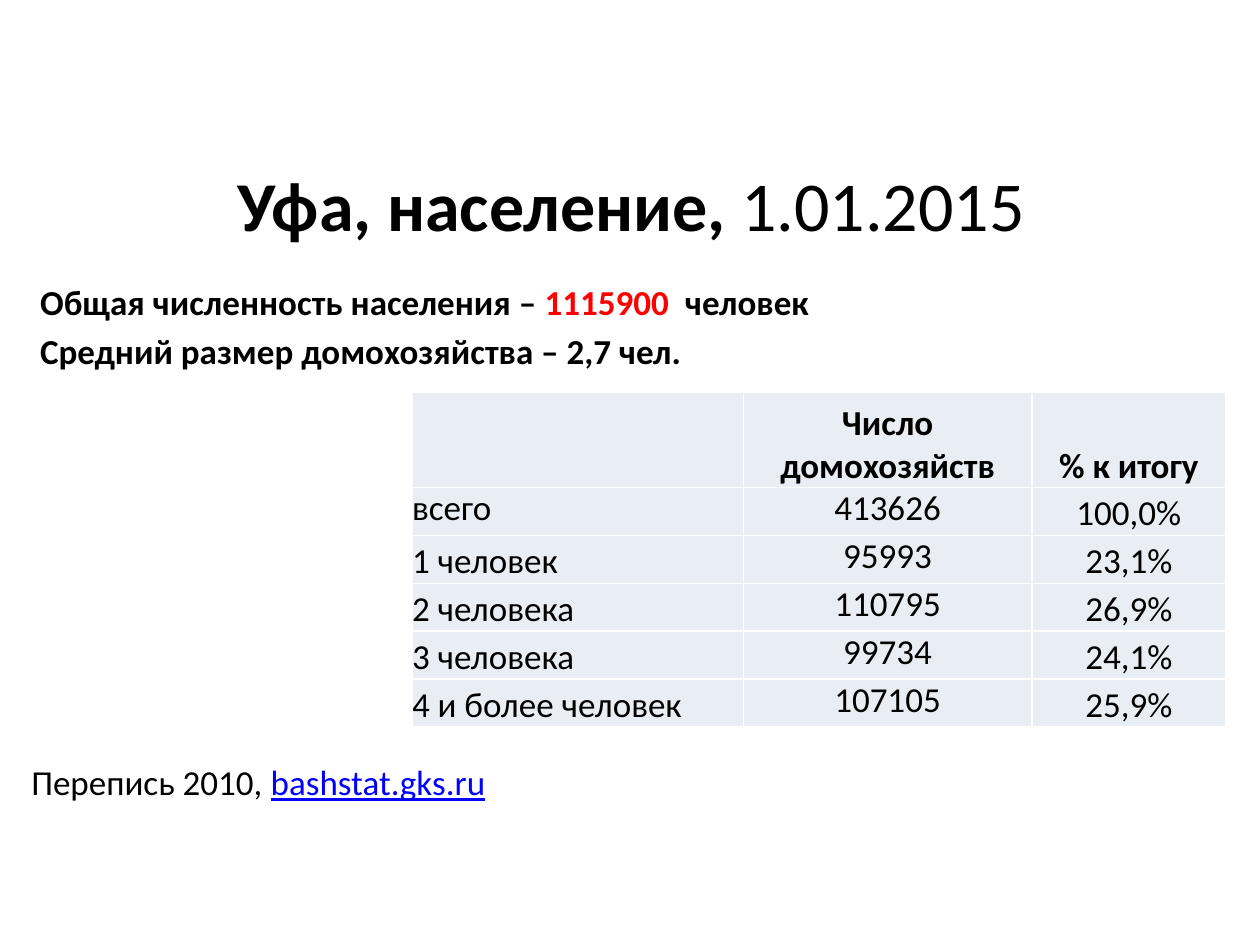
from pptx import Presentation
from pptx.dml.color import RGBColor
from pptx.enum.text import MSO_ANCHOR, PP_ALIGN
from pptx.oxml.ns import qn
from pptx.util import Inches, Pt
from lxml import etree

BLACK = RGBColor(0x00, 0x00, 0x00)
RED = RGBColor(0xFF, 0x00, 0x00)
BLUE = RGBColor(0x00, 0x00, 0xFF)
CELL_FILL = RGBColor(0xE9, 0xED, 0xF4)
TOP, MIDDLE, BOTTOM = MSO_ANCHOR.TOP, MSO_ANCHOR.MIDDLE, MSO_ANCHOR.BOTTOM
LEFT, CENTER = PP_ALIGN.LEFT, PP_ALIGN.CENTER


def add_run(p, text, size=20, bold=False, color=BLACK, underline=None):
    r = p.add_run()
    r.text = text
    r.font.name = "Calibri"
    r.font.size = Pt(size)
    r.font.bold = bold
    r.font.underline = underline
    r.font.color.rgb = color


def add_text_frame(s, left, top, width, height):
    box = s.shapes.add_textbox(Inches(left), Inches(top), Inches(width), Inches(height))
    box.text_frame.word_wrap = True
    return box.text_frame


prs = Presentation()
prs.slide_width = Inches(10)
prs.slide_height = Inches(7.5)
s = prs.slides.add_slide(prs.slide_layouts[6])

tf = add_text_frame(s, 0.51, 0.99, 9, 1.25)
tf.vertical_anchor = MIDDLE
p = tf.paragraphs[0]
p.alignment = CENTER
add_run(p, "Уфа, население, ", size=40, bold=True)
add_run(p, "1.01.2015", size=40)

tf = add_text_frame(s, 0.15, 5.99, 7.58, 0.44)
p = tf.paragraphs[0]
add_run(p, "Перепись 2010, ")
add_run(p, "bashstat.gks.ru", color=BLUE, underline=True)

rows = [
    ("", "Число домохозяйств", "% к итогу"),
    ("всего", "413626", "100,0%"),
    ("1 человек", "95993", "23,1%"),
    ("2 человека", "110795", "26,9%"),
    ("3 человека", "99734", "24,1%"),
    ("4 и более человек", "107105", "25,9%"),
]
table = s.shapes.add_table(
    len(rows), 3, Inches(3.27), Inches(3.11), Inches(6.46), Inches(2.66)
).table
for column, width in zip(table.columns, (2.63, 2.29, 1.54)):
    column.width = Inches(width)
for i, texts in enumerate(rows):
    table.rows[i].height = Inches(0.76 if i == 0 else 0.38)
    for j, text in enumerate(texts):
        cell = table.cell(i, j)
        cell.margin_left = cell.margin_right = 0
        cell.margin_top = cell.margin_bottom = 0
        top_aligned = i > 0 and (j == 1 or text == "всего")
        cell.vertical_anchor = TOP if top_aligned else BOTTOM
        tcPr = cell._tc.get_or_add_tcPr()
        for side in ("a:lnL", "a:lnR", "a:lnT", "a:lnB"):
            ln = etree.SubElement(tcPr, qn(side), w=str(Pt(1)))
            fill = etree.SubElement(ln, qn("a:solidFill"))
            etree.SubElement(fill, qn("a:srgbClr"), val="FFFFFF")
        cell.fill.solid()
        cell.fill.fore_color.rgb = CELL_FILL
        if text:
            p = cell.text_frame.paragraphs[0]
            p.alignment = LEFT if j == 0 else CENTER
            add_run(p, text, bold=i == 0)

tf = add_text_frame(s, 0.16, 2.18, 9.69, 0.93)
facts = [
    [("Общая численность населения – ", BLACK), ("1115900 ", RED), (" человек", BLACK)],
    [("Средний размер домохозяйства – 2,7 чел.", BLACK)],
]
for i, runs in enumerate(facts):
    p = tf.add_paragraph() if i else tf.paragraphs[0]
    p._p.get_or_add_pPr().set("marL", str(Inches(0.06)))
    if i:
        p.space_before = Pt(4)
    for text, color in runs:
        add_run(p, text, bold=True, color=color)

prs.save("out.pptx")
